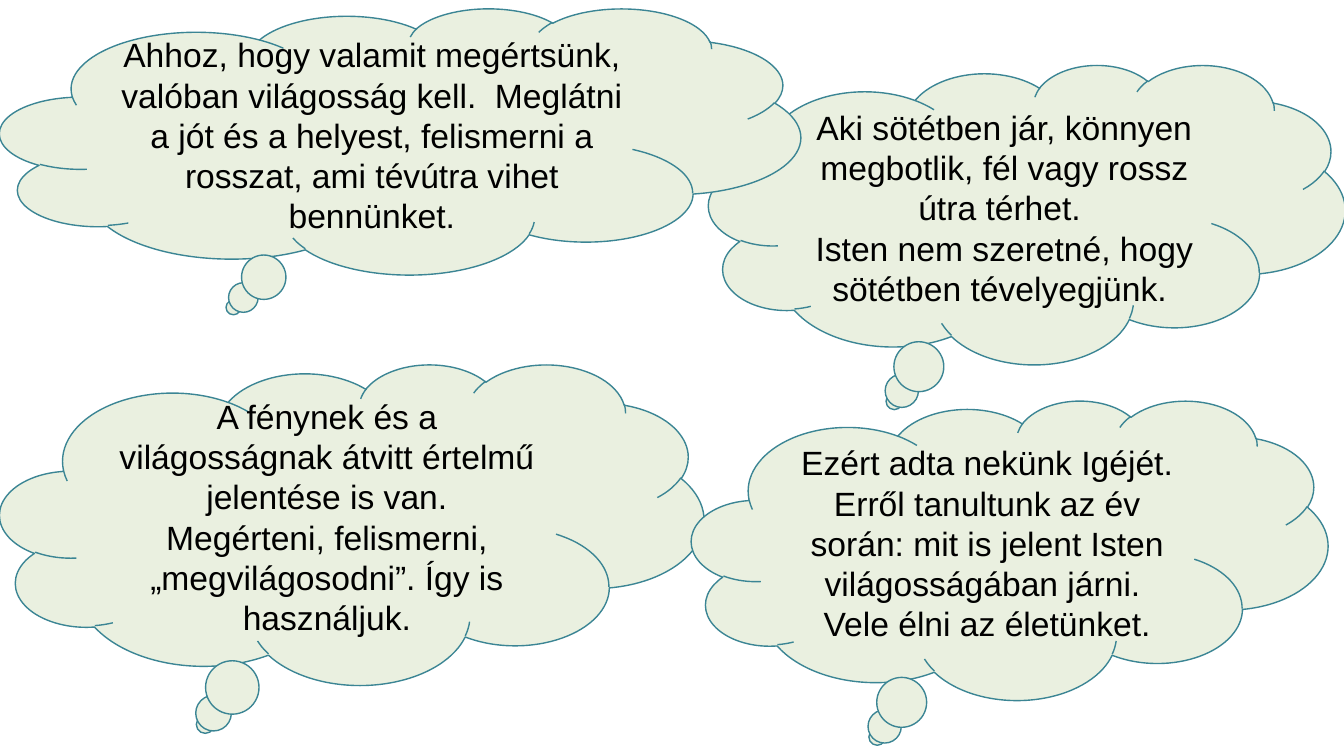
"""Build a slide of four thought clouds about light and darkness."""
from dataclasses import dataclass

from pptx import Presentation
from pptx.dml.color import RGBColor
from pptx.enum.shapes import MSO_SHAPE
from pptx.enum.text import MSO_ANCHOR, PP_ALIGN
from pptx.slide import Slide
from pptx.util import Inches, Pt

CLOUD_FILL = RGBColor(0xEA, 0xF0, 0xE0)
CLOUD_LINE = RGBColor(0x3B, 0x85, 0x94)
BLACK = RGBColor(0, 0, 0)


@dataclass
class Cloud:
    left: float
    top: float
    width: float
    height: float
    paragraphs: list[str]


CLOUDS = [
    Cloud(7.03, 0.64, 6.31, 2.97, [
        "Aki sötétben jár, könnyen megbotlik, fél vagy rossz útra térhet. ",
        "Isten nem szeretné, hogy sötétben tévelyegjünk. ",
    ]),
    Cloud(0, 3.61, 6.98, 3.18, [
        "A fénynek és a világosságnak átvitt értelmű jelentése is van.",
        "Megérteni, felismerni, „megvilágosodni”. Így is használjuk.",
    ]),
    Cloud(0, 0.08, 7.94, 2.64, [
        "Ahhoz, hogy valamit megértsünk, valóban világosság kell.  Meglátni "
        "a jót és a helyest, felismerni a rosszat, ami tévútra vihet bennünket.",
    ]),
    Cloud(6.86, 3.97, 6.31, 2.97, [
        "Ezért adta nekünk Igéjét. Erről tanultunk az év során: "
        "mit is jelent Isten világosságában járni. ",
        "Vele élni az életünket.",
    ]),
]


def add_cloud(s: Slide, cloud: Cloud) -> None:
    sp = s.shapes.add_shape(
        MSO_SHAPE.CLOUD_CALLOUT, Inches(cloud.left), Inches(cloud.top),
        Inches(cloud.width), Inches(cloud.height))
    sp.shadow.inherit = False
    sp.fill.solid()
    sp.fill.fore_color.rgb = CLOUD_FILL
    sp.line.color.rgb = CLOUD_LINE
    sp.line.width = Pt(1)
    tf = sp.text_frame
    tf.word_wrap = True
    tf.vertical_anchor = MSO_ANCHOR.MIDDLE
    tf.text = "\n".join(cloud.paragraphs)
    for p in tf.paragraphs:
        p.alignment = PP_ALIGN.CENTER
        for r in p.runs:
            r.font.name = "Arial"
            r.font.size = Pt(24)
            r.font.color.rgb = BLACK


def main() -> None:
    prs = Presentation()
    prs.slide_width = Inches(13.33)
    prs.slide_height = Inches(7.5)
    s = prs.slides.add_slide(prs.slide_layouts[6])
    for cloud in CLOUDS:
        add_cloud(s, cloud)
    prs.save("out.pptx")


if __name__ == "__main__":
    main()
